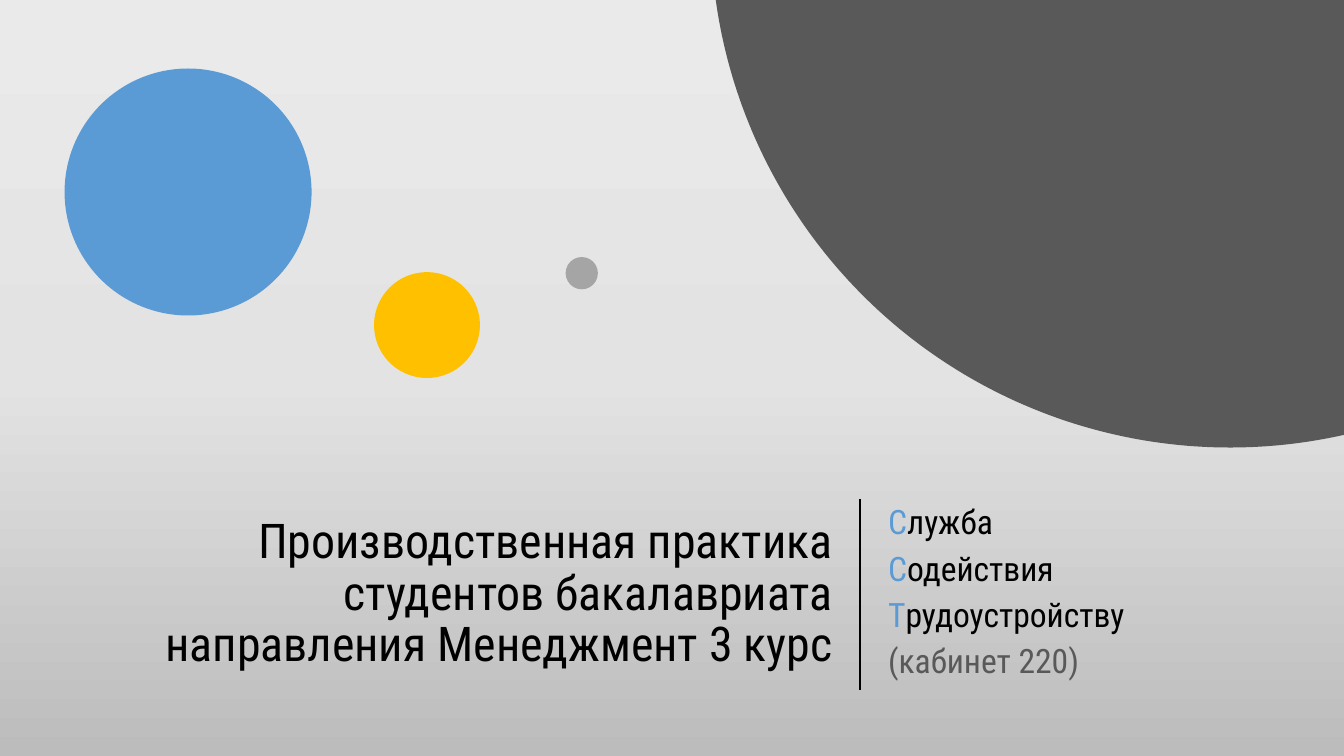
from copy import deepcopy
from math import acos, asin, cos, pi, sin

from lxml.etree import SubElement
from pptx import Presentation
from pptx.dml.color import RGBColor as RGB
from pptx.enum.shapes import MSO_CONNECTOR as LINE, MSO_SHAPE as SHAPE
from pptx.enum.text import MSO_ANCHOR as ANCHOR, MSO_AUTO_SIZE as FIT, PP_ALIGN as ALIGN
from pptx.oxml.ns import qn
from pptx.util import Inches, Pt

FONT = "Roboto Condensed"
BLACK = RGB(0x00, 0x00, 0x00)
BLUE = RGB(0x5B, 0x9B, 0xD5)
GOLD = RGB(0xFF, 0xC0, 0x00)
GRAY = RGB(0xA5, 0xA5, 0xA5)
DARK = RGB(0x59, 0x59, 0x59)

# Content
TITLE = "Производственная практика студентов бакалавриата направления Менеджмент 3 курс"
OFFICE = [
    [("С", BLUE), ("лужба", BLACK)],
    [("С", BLUE), ("одействия", BLACK)],
    [("Т", BLUE), ("рудоустройству", BLACK)],
    [("(кабинет 220)", DARK)],
]
DOTS = [  # left, top, diameter, colour
    (0.64, 0.68, 2.45, BLUE),
    (3.71, 2.7, 1.05, GOLD),
    (5.61, 2.55, 0.32, GRAY),
]
STOPS = [  # position, colour
    (0, RGB(0xEB, 0xEA, 0xEA)),
    (0.5, RGB(0xE4, 0xE3, 0xE3)),
    (1, RGB(0xBD, 0xBC, 0xBC)),
]
WIDE, HIGH = 13.33, 7.5
TOP, TALL = 4.95, 1.9  # band shared by the title, the rule and the office
DISC_X, DISC_Y, DISC_R = 12.2, -0.71, 5.15
STEPS = 120


def add_run(para, text, size, color):
    run = para.add_run()
    run.text = text
    run.font.name, run.font.size = FONT, Pt(size)
    run.font.color.rgb = color


def set_frame(frame):
    frame.word_wrap = True
    frame.auto_size = FIT.NONE
    frame.vertical_anchor = ANCHOR.MIDDLE


def paint(shape, color):
    shape.shadow.inherit = False
    shape.fill.solid()
    shape.fill.fore_color.rgb = color
    shape.line.fill.background()


def main():
    deck = Presentation()
    deck.slide_width, deck.slide_height = Inches(WIDE), Inches(HIGH)
    slide = deck.slides.add_slide(deck.slide_layouts[5])
    shapes = slide.shapes

    # Background gradient, top to bottom
    fill = slide.background.fill
    fill.gradient()
    fill.gradient_angle = 270
    stop_list = slide.element.find(".//" + qn("a:gsLst"))
    stop_list.append(deepcopy(stop_list[-1]))
    for stop, (place, color) in zip(fill.gradient_stops, STOPS):
        stop.position = place
        stop.color.rgb = color

    # Title
    title = shapes.title
    title.left, title.top = Inches(0.92), Inches(TOP)
    title.width, title.height = Inches(7.44), Inches(TALL)
    set_frame(title.text_frame)
    para = title.text_frame.paragraphs[0]
    para.alignment, para.line_spacing = ALIGN.RIGHT, 0.9
    add_run(para, TITLE, 34.2, BLACK)

    # Office name
    frame = shapes.add_textbox(Inches(8.71), Inches(TOP), Inches(3.56), Inches(TALL)).text_frame
    set_frame(frame)
    for row, parts in enumerate(OFFICE):
        para = frame.add_paragraph() if row else frame.paragraphs[0]
        para.line_spacing, para.space_before = 0.8, Pt(10)
        for text, color in parts:
            add_run(para, text, 24, color)

    # Small circles
    for left, top, size, color in DOTS:
        dot = shapes.add_shape(SHAPE.OVAL, Inches(left), Inches(top), Inches(size), Inches(size))
        paint(dot, color)

    # Large disc, cut by the top and right edges of the slide
    start = acos((WIDE - DISC_X) / DISC_R)
    end = pi - asin(-DISC_Y / DISC_R)
    turns = [start + (end - start) * i / STEPS for i in range(STEPS + 1)]
    arc = [(Inches(DISC_X + DISC_R * cos(t)), Inches(DISC_Y + DISC_R * sin(t))) for t in turns]
    pen = shapes.build_freeform(Inches(WIDE), 0)
    pen.add_line_segments(arc, close=True)
    paint(pen.convert_to_shape(), DARK)

    # Rule between title and office
    rule = shapes.add_connector(
        LINE.STRAIGHT, Inches(8.53), Inches(TOP), Inches(8.53), Inches(TOP + TALL))
    rule.line.color.rgb, rule.line.width = BLACK, Pt(1.5)
    SubElement(rule.element.spPr, qn("a:effectLst"))

    deck.save("out.pptx")


if __name__ == "__main__":
    main()
